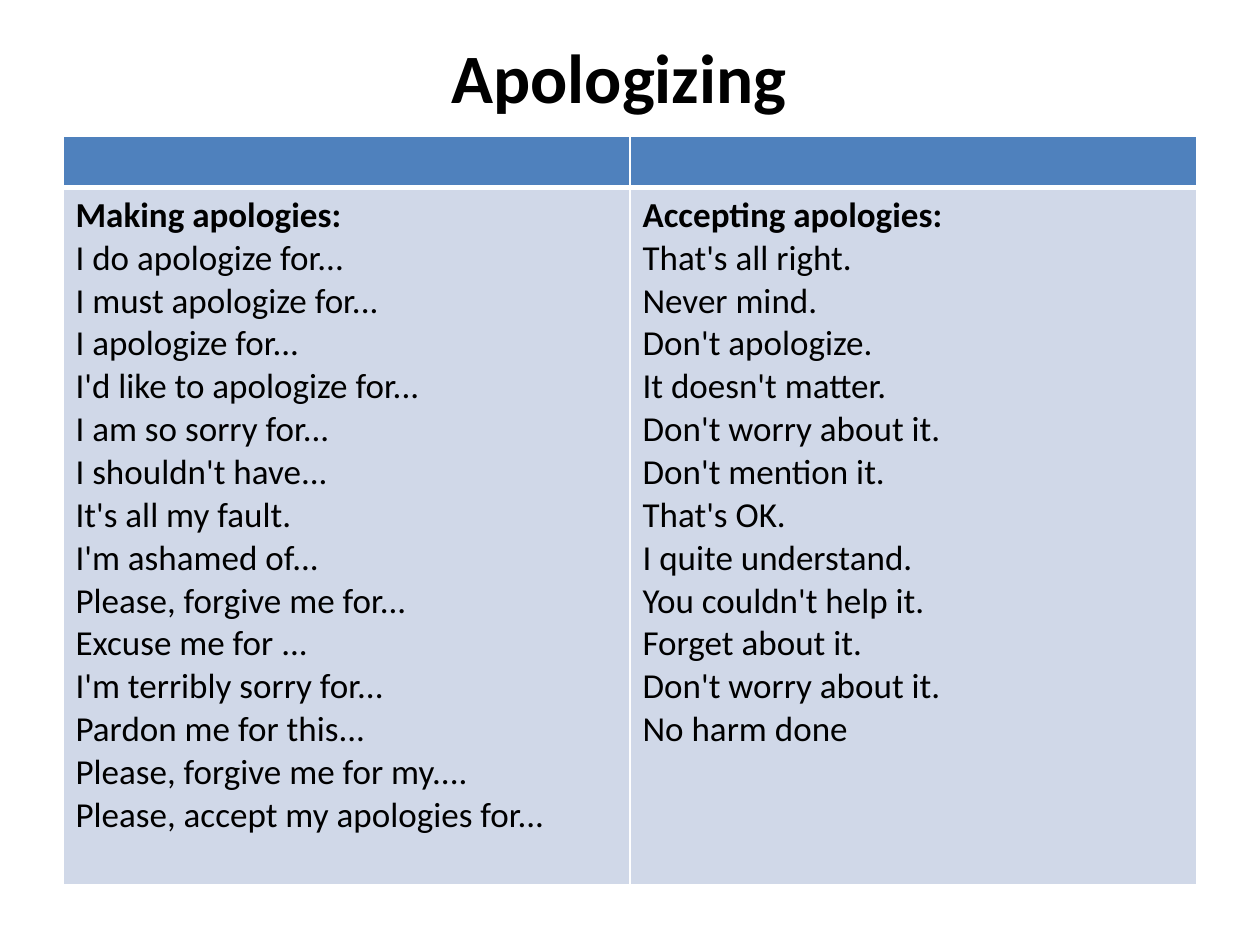
import pptx
import pptx.dml.color
import pptx.enum.text
import pptx.oxml
import pptx.oxml.ns
import pptx.util
from pptx.util import Inches

MAKING_APOLOGIES = [
    "Making apologies:",
    "I do apologize for...",
    "I must apologize for...",
    "I apologize for...",
    "I'd like to apologize for...",
    "I am so sorry for...",
    "I shouldn't have...",
    "It's all my fault.",
    "I'm ashamed of...",
    "Please, forgive me for...",
    "Excuse me for ...",
    "I'm terribly sorry for...",
    "Pardon me for this...",
    "Please, forgive me for my....",
    "Please, accept my apologies for...",
]
ACCEPTING_APOLOGIES = [
    "Accepting apologies:",
    "That's all right.",
    "Never mind.",
    "Don't apologize.",
    "It doesn't matter.",
    "Don't worry about it.",
    "Don't mention it.",
    "That's OK.",
    "I quite understand.",
    "You couldn't help it.",
    "Forget about it.",
    "Don't worry about it.",
    "No harm done",
]
HEADER_FILL, BODY_FILL, BORDER_COLOR = "4F81BD", "D0D8E8", "FFFFFF"


def color(value):
    return pptx.dml.color.RGBColor.from_string(value)


def format_font(font, size, bold):
    values = {"name": "Calibri", "size": pptx.util.Pt(size), "bold": bold}
    for name, value in values.items():
        setattr(font, name, value)
    font.color.rgb = color("000000")


def add_title(slide, text):
    title = slide.shapes.title
    box = {"left": 0.33, "top": 0, "width": 9.17, "height": 1.2}
    for name, value in box.items():
        setattr(title, name, Inches(value))
    title.text_frame.vertical_anchor = pptx.enum.text.MSO_ANCHOR.MIDDLE
    paragraph = title.text_frame.paragraphs[0]
    paragraph.text = text
    paragraph.alignment = pptx.enum.text.PP_ALIGN.CENTER
    format_font(paragraph.runs[0].font, 39.6, True)


def style_cell(cell, fill, top, bottom):
    """Set the border widths in points, then the fill."""
    properties = cell._tc.get_or_add_tcPr()
    for side, width in {"L": 1, "R": 1, "T": top, "B": bottom}.items():
        properties.append(pptx.oxml.parse_xml(
            f'<a:ln{side} {pptx.oxml.ns.nsdecls("a")} w="{pptx.util.Pt(width)}">'
            f'<a:solidFill><a:srgbClr val="{BORDER_COLOR}"/></a:solidFill>'
            f'</a:ln{side}>'))
    cell.fill.solid()
    cell.fill.fore_color.rgb = color(fill)


def write_phrases(cell, phrases):
    """Write one paragraph per phrase, with the first as a bold heading."""
    cell.text = "\n".join(phrases)
    for index, paragraph in enumerate(cell.text_frame.paragraphs):
        format_font(paragraph.runs[0].font, 20, index == 0)


def add_phrase_table(slide, columns):
    frame = slide.shapes.add_table(
        2, len(columns), Inches(0.5), Inches(1.08), Inches(9), Inches(5.94))
    table = frame.table
    for row, height in zip(table.rows, (0.41, 5.53)):
        row.height = Inches(height)
    for index, phrases in enumerate(columns):
        style_cell(table.cell(0, index), HEADER_FILL, top=1, bottom=3)
        style_cell(table.cell(1, index), BODY_FILL, top=3, bottom=1)
        write_phrases(table.cell(1, index), phrases)


def main():
    presentation = pptx.Presentation()
    presentation.slide_width = Inches(10)
    presentation.slide_height = Inches(7.5)
    # Title-only layout
    slide = presentation.slides.add_slide(presentation.slide_layouts[5])
    add_title(slide, "Apologizing")
    add_phrase_table(slide, [MAKING_APOLOGIES, ACCEPTING_APOLOGIES])
    presentation.save("out.pptx")


if __name__ == "__main__":
    main()
